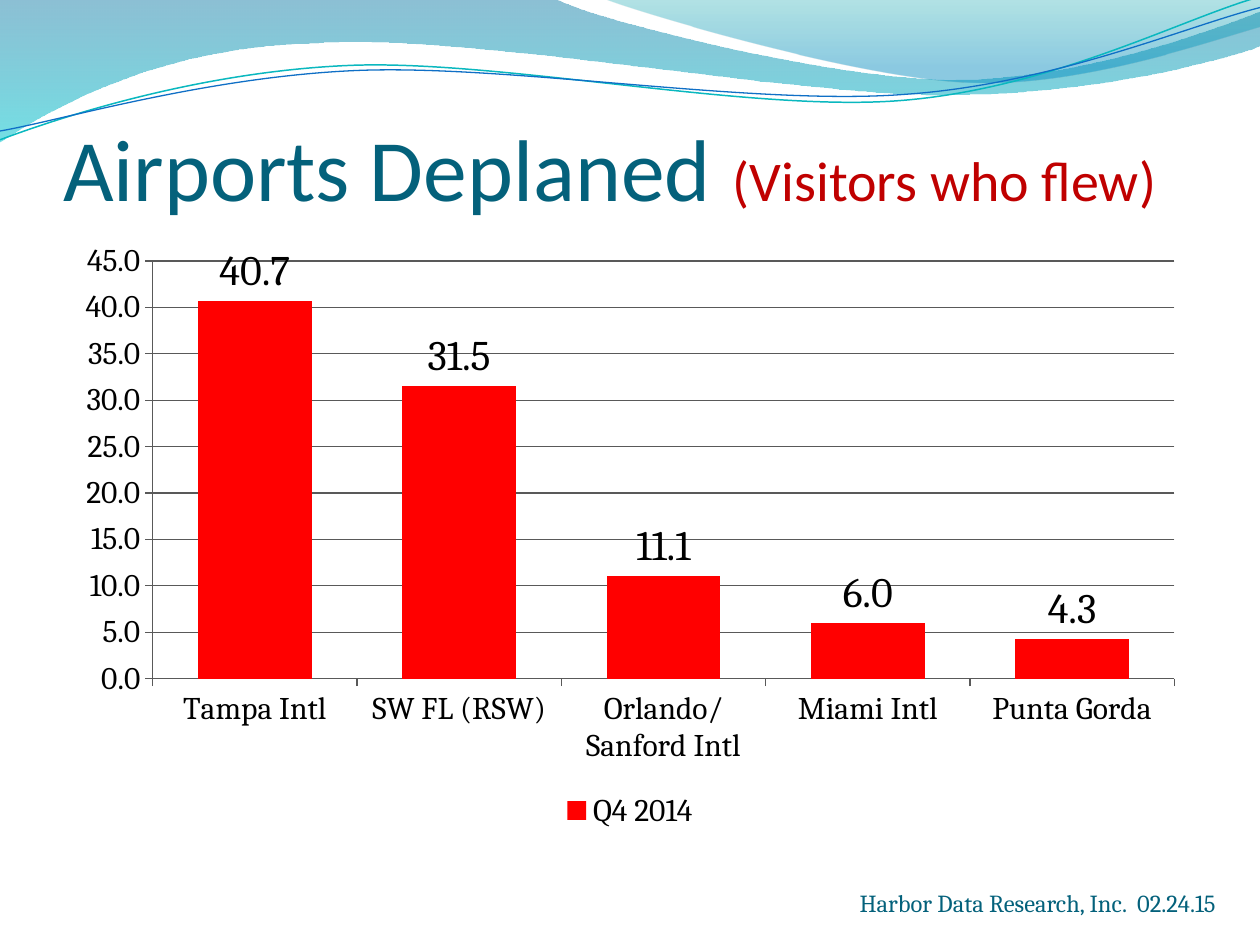
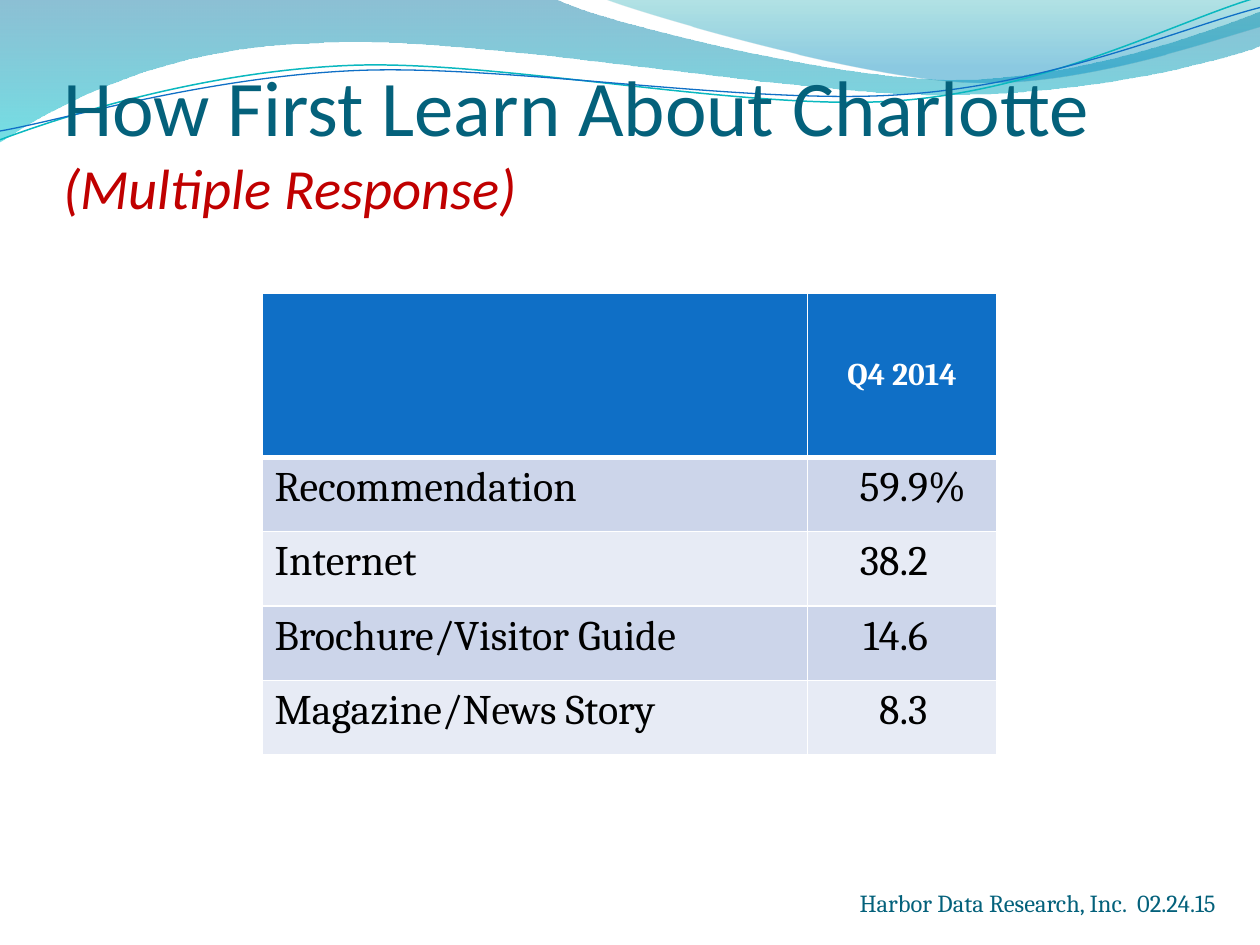
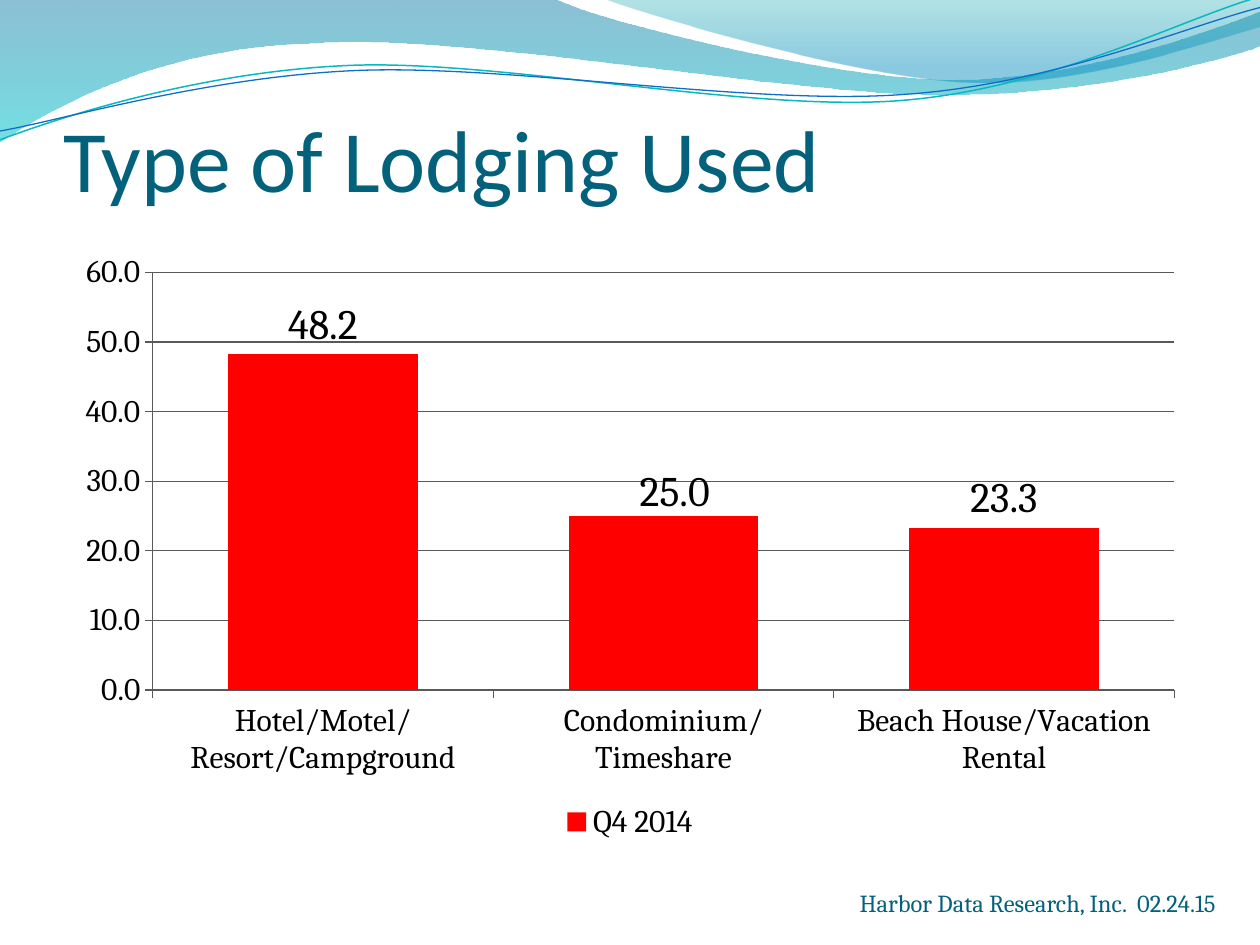
from dataclasses import dataclass
from typing import NamedTuple

from lxml.etree import Element, SubElement
from pptx import Presentation
from pptx.chart.data import CategoryChartData
from pptx.dml.color import RGBColor
from pptx.enum.chart import XL_CHART_TYPE as ChartType
from pptx.enum.chart import XL_LABEL_POSITION as LabelPosition
from pptx.enum.chart import XL_LEGEND_POSITION as LegendPosition
from pptx.enum.chart import XL_TICK_MARK as TickMark
from pptx.enum.text import MSO_ANCHOR as Anchor
from pptx.enum.text import MSO_AUTO_SIZE as AutoSize
from pptx.enum.text import PP_ALIGN as Align
from pptx.oxml.ns import qn
from pptx.util import Emu, Pt

EMU_PER_PX = 9144
PERIOD = "Q4 2014"
FOOTER = "Harbor Data Research, Inc.  02.24.15"


@dataclass(frozen=True)
class Theme:
    title_font: str = "Calibri"
    body_font: str = "Cambria"
    teal: str = "04617B"
    crimson: str = "C00000"
    bar: str = "FF0000"
    ink: str = "000000"
    white: str = "FFFFFF"
    grid: str = "595959"
    header: str = "0F6FC6"
    bands: tuple[str, str] = ("CCD5EA", "E7EBF5")
    title_size: float = 50
    long_title_size: float = 45
    title_gap_size: float = 54
    note_size: float = 32
    long_note_size: float = 32.4
    value_size: float = 24
    label_size: float = 18
    footer_size: float = 14


class Box(NamedTuple):
    left: int
    top: int
    width: int
    height: int


class Stop(NamedTuple):
    position: float
    color: str
    opacity: int


class Wave(NamedTuple):
    start: tuple[int, int]
    segments: tuple[tuple[int, ...], ...]
    stops: tuple[Stop, ...] = ()
    line: str = ""
    weight: float = 0


class TitleRun(NamedTuple):
    text: str
    size: float
    color: str
    italic: bool = False


class LabelShift(NamedTuple):
    index: int
    x: float
    y: float


class BarChart(NamedTuple):
    box: Box
    shares: dict[str, float]
    maximum: int
    step: int
    shifts: tuple[LabelShift, ...] = ()


THEME = Theme()
TITLE_BOX = Box(50, 50, 900, 125)
FOOTER_BOX = Box(633, 700, 342, 34)

WAVES = (
    Wave(
        (0, 0),
        ((440, -1), (476, 17, 664, 63, 758, 63), (853, 63, 958, 26, 1000, 9),
         (1001, 36), (983, 44, 870, 76, 746, 75), (622, 75, 382, 28, 257, 34),
         (129, 36, 46, 83, -1, 113)),
        stops=(Stop(0, "0074A1", 45), Stop(1, "00C6CF", 55)),
    ),
    Wave(
        (479, -1),
        ((509, 11, 682, 62, 769, 65), (856, 69, 961, 32, 1000, 21), (1000, 0)),
        stops=(Stop(0, "00A1A9", 30), Stop(0.8, "008BBF", 45)),
    ),
    Wave(
        (0, 111),
        ((48, 93, 158, 57, 277, 52), (395, 47, 593, 89, 713, 80),
         (833, 71, 938, 15, 998, -2)),
        line="0AB8BF", weight=0.85,
    ),
    Wave(
        (0, 104),
        ((47, 96, 164, 61, 283, 56), (403, 51, 597, 84, 717, 75),
         (836, 67, 941, 21, 1000, 6)),
        line="0F6FC6", weight=0.75,
    ),
)

AIRPORTS = BarChart(
    Box(50, 183, 900, 480),
    {"Tampa Intl": 40.7, "SW FL (RSW)": 31.5, "Orlando/ Sanford Intl": 11.1,
     "Miami Intl": 6.0, "Punta Gorda": 4.3},
    maximum=45, step=5,
)
LODGING = BarChart(
    Box(50, 192, 900, 480),
    {"Hotel/Motel/ Resort/Campground": 48.2, "Condominium/ Timeshare": 25.0,
     "Beach House/Vacation Rental": 23.3},
    maximum=60, step=10, shifts=(LabelShift(1, 0.01, 0.01),),
)
SOURCES = (
    ("Recommendation", "59.9%"),
    ("Internet", "38.2"),
    ("Brochure/Visitor Guide", "14.6"),
    ("Magazine/News Story", "8.3"),
)
SOURCES_ORIGIN = (208, 233)
SOURCES_COLUMNS = (433, 150)
HEADER_HEIGHT, ROW_HEIGHT = 130, 59
DECIMAL_TAB = 63


def px(length: float) -> Emu:
    return Emu(round(length * EMU_PER_PX))


def place(box: Box) -> tuple[Emu, ...]:
    return tuple(px(length) for length in box)


def rgb(color: str) -> RGBColor:
    return RGBColor.from_string(color)


def style_font(font, *, size: float, color: str = THEME.ink, name: str = THEME.body_font,
               bold: bool = False, italic: bool = False) -> None:
    font.name, font.size = name, Pt(size)
    font.bold, font.italic = bold, italic
    font.color.rgb = rgb(color)


def write(paragraph, text: str, *, align: Align = Align.LEFT, **font_format) -> None:
    paragraph.alignment = align
    run = paragraph.add_run()
    run.text = text
    style_font(run.font, **font_format)


def bend_segments(ribbon, wave: Wave) -> None:
    straight = list(ribbon.element.iter(qn("a:lnTo")))
    for node, segment in zip(straight, wave.segments):
        if len(segment) == 2:
            continue
        curve = Element(qn("a:cubicBezTo"))
        for x, y in zip(segment[::2], segment[1::2]):
            SubElement(curve, qn("a:pt"), x=str(px(x) - ribbon.left), y=str(px(y) - ribbon.top))
        node.getparent().replace(node, curve)


def draw_wave(slide, wave: Wave):
    builder = slide.shapes.build_freeform(*(px(length) for length in wave.start))
    corners = [(px(segment[-2]), px(segment[-1])) for segment in wave.segments]
    builder.add_line_segments(corners, close=bool(wave.stops))
    ribbon = builder.convert_to_shape()
    bend_segments(ribbon, wave)
    ribbon.shadow.inherit = False
    if wave.stops:
        ribbon.line.fill.background()
        ribbon.fill.gradient()
        ribbon.fill.gradient_angle = 270
        for target, stop in zip(ribbon.fill.gradient_stops, wave.stops):
            target.position = stop.position
            target.color.rgb = rgb(stop.color)
        for node, stop in zip(ribbon.element.iter(qn("a:srgbClr")), wave.stops):
            SubElement(node, qn("a:alpha"), val=str(stop.opacity * 1000))
    else:
        ribbon.fill.background()
        ribbon.line.color.rgb = rgb(wave.line)
        ribbon.line.width = Pt(wave.weight)
    return ribbon


def draw_footer(slide):
    footer = slide.shapes.add_textbox(*place(FOOTER_BOX))
    frame = footer.text_frame
    frame.word_wrap = True
    frame.auto_size = AutoSize.SHAPE_TO_FIT_TEXT
    write(frame.paragraphs[0], FOOTER, align=Align.RIGHT, size=THEME.footer_size,
          color=THEME.teal)
    return footer


def move_decor_to_layout(slide, layout) -> None:
    for placeholder in list(layout.placeholders)[1:]:
        layout.shapes.element.remove(placeholder.element)
    decor = [draw_wave(slide, wave) for wave in WAVES] + [draw_footer(slide)]
    for part in decor:
        layout.shapes.element.append(part.element)


def set_title(slide, *runs: TitleRun, box: Box = TITLE_BOX) -> None:
    title = slide.shapes.title
    title.left, title.top, title.width, title.height = place(box)
    frame = title.text_frame
    frame.word_wrap = True
    frame.auto_size = AutoSize.NONE
    frame.vertical_anchor = Anchor.BOTTOM
    frame.margin_left = frame.margin_right = frame.margin_bottom = 0
    frame.margin_top = px(5)
    for run in runs:
        write(frame.paragraphs[0], run.text, size=run.size, color=run.color,
              name=THEME.title_font, italic=run.italic)


def shift_label(bars, shift: LabelShift) -> None:
    label = bars.points[shift.index].data_label
    style_font(label.font, size=THEME.value_size)
    label.position = LabelPosition.OUTSIDE_END
    node = next(bars.data_labels._element.iter(qn("c:dLbl")))
    layout = Element(qn("c:layout"))
    manual = SubElement(layout, qn("c:manualLayout"))
    SubElement(manual, qn("c:x"), val=str(shift.x))
    SubElement(manual, qn("c:y"), val=str(shift.y))
    node.insert(1, layout)


def draw_bars(slide, spec: BarChart) -> None:
    data = CategoryChartData(number_format="0.0")
    data.categories = list(spec.shares)
    data.add_series(PERIOD, list(spec.shares.values()))
    chart = slide.shapes.add_chart(ChartType.COLUMN_CLUSTERED, *place(spec.box), data).chart
    style_font(chart.font, size=THEME.label_size)
    chart.has_title = False
    chart.has_legend = True
    chart.legend.position = LegendPosition.BOTTOM
    chart.legend.include_in_layout = False

    values = chart.value_axis
    values.minimum_scale, values.maximum_scale = 0, spec.maximum
    values.major_unit = spec.step
    values.tick_labels.number_format = "#,##0.0"
    values.tick_labels.number_format_is_linked = False
    values.has_major_gridlines = True
    for axis in (values, chart.category_axis):
        axis.major_tick_mark = TickMark.OUTSIDE
        axis.format.line.color.rgb = rgb(THEME.grid)
    values.major_gridlines.format.line.color.rgb = rgb(THEME.grid)

    plot = chart.plots[0]
    plot.gap_width = 80
    plot.vary_by_categories = False
    bars = plot.series[0]
    bars.format.fill.solid()
    bars.format.fill.fore_color.rgb = rgb(THEME.bar)
    labels = bars.data_labels
    labels.show_value = True
    labels.position = LabelPosition.OUTSIDE_END
    labels.number_format = "0.0"
    labels.number_format_is_linked = False
    style_font(labels.font, size=THEME.value_size)
    for shift in spec.shifts:
        shift_label(bars, shift)


def paint_cell(cell, fill: str, bottom: float = 1, top: float = 1) -> None:
    properties = cell._tc.get_or_add_tcPr()
    for side, weight in (("L", 1), ("R", 1), ("T", top), ("B", bottom)):
        border = SubElement(properties, qn(f"a:ln{side}"), w=str(Pt(weight)))
        solid = SubElement(border, qn("a:solidFill"))
        SubElement(solid, qn("a:srgbClr"), val=THEME.white)
    cell.fill.solid()
    cell.fill.fore_color.rgb = rgb(fill)


def add_decimal_tab(paragraph) -> None:
    tabs = SubElement(paragraph._p.get_or_add_pPr(), qn("a:tabLst"))
    SubElement(tabs, qn("a:tab"), pos=str(px(DECIMAL_TAB)), algn="dec")


def draw_sources(slide) -> None:
    height = HEADER_HEIGHT + ROW_HEIGHT * len(SOURCES)
    box = Box(*SOURCES_ORIGIN, sum(SOURCES_COLUMNS), height)
    table = slide.shapes.add_table(len(SOURCES) + 1, 2, *place(box)).table
    for column, width in zip(table.columns, SOURCES_COLUMNS):
        column.width = px(width)
    for index, row in enumerate(table.rows):
        row.height = px(ROW_HEIGHT if index else HEADER_HEIGHT)
        for cell in row.cells:
            if index:
                paint_cell(cell, THEME.bands[(index - 1) % 2], top=3 if index == 1 else 1)
            else:
                paint_cell(cell, THEME.header, bottom=3)

    period = table.cell(0, 1)
    period.vertical_anchor = Anchor.MIDDLE
    write(period.text_frame.paragraphs[0], PERIOD, align=Align.CENTER,
          size=THEME.label_size, color=THEME.white, bold=True)
    for index, (source, share) in enumerate(SOURCES, 1):
        name, value = (table.cell(index, column).text_frame.paragraphs[0] for column in (0, 1))
        write(name, source, size=THEME.value_size)
        add_decimal_tab(value)
        write(value, f"\t{share}", size=THEME.value_size)


def main() -> None:
    deck = Presentation()
    deck.slide_width, deck.slide_height = px(1000), px(750)
    layout = deck.slide_layouts[5]
    airports, learning, lodging = (deck.slides.add_slide(layout) for _ in range(3))
    move_decor_to_layout(airports, layout)

    set_title(airports,
              TitleRun("Airports Deplaned", THEME.title_size, THEME.teal),
              TitleRun(" ", THEME.title_gap_size, THEME.crimson),
              TitleRun("(Visitors who flew)", THEME.note_size, THEME.crimson))
    draw_bars(airports, AIRPORTS)

    set_title(learning,
              TitleRun("How First Learn About Charlotte ", THEME.long_title_size, THEME.teal),
              TitleRun("(Multiple Response)", THEME.long_note_size, THEME.crimson, italic=True))
    draw_sources(learning)

    set_title(lodging, TitleRun("Type of Lodging Used", THEME.title_size, THEME.teal),
              box=TITLE_BOX._replace(top=42))
    draw_bars(lodging, LODGING)
    deck.save("out.pptx")


if __name__ == "__main__":
    main()
